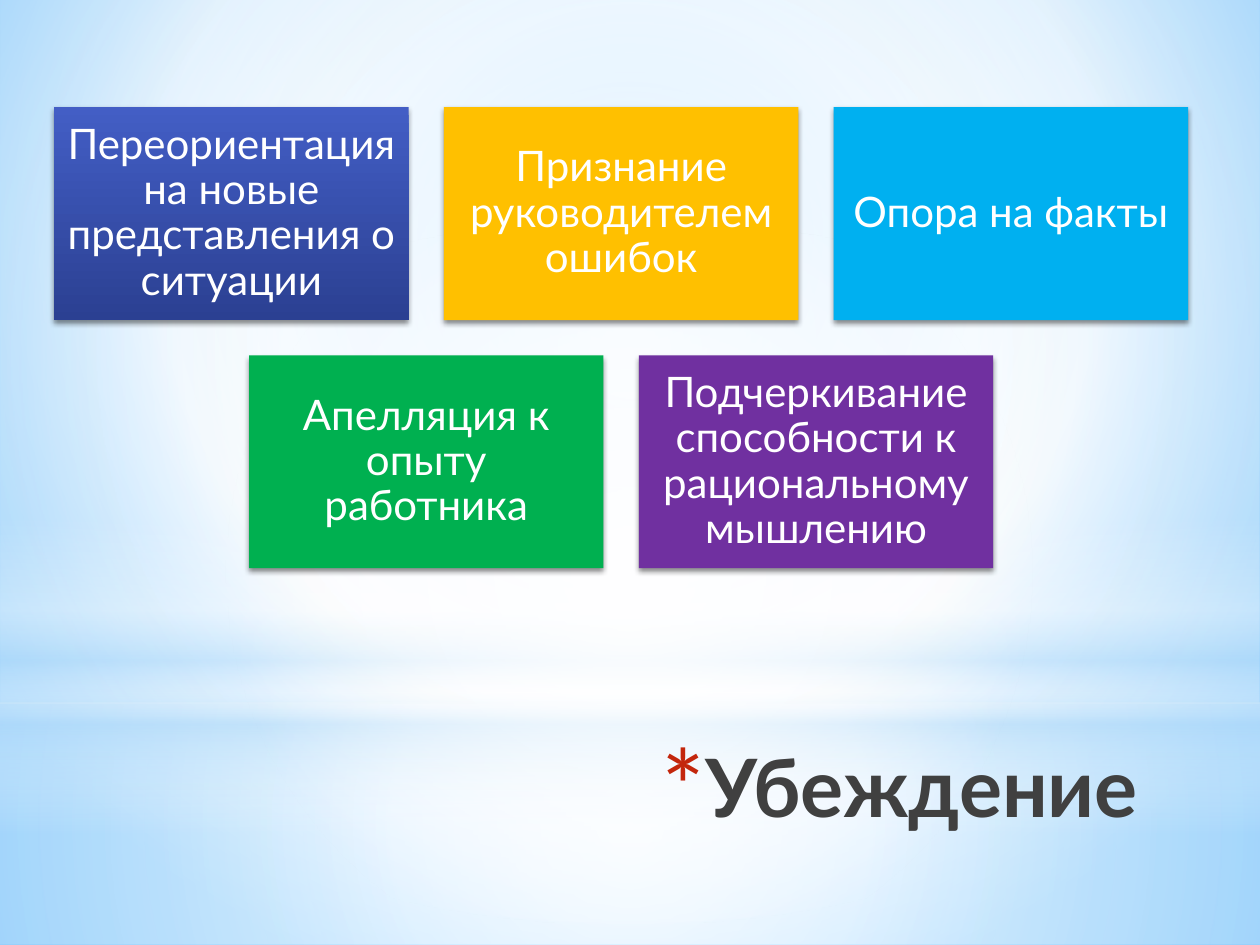
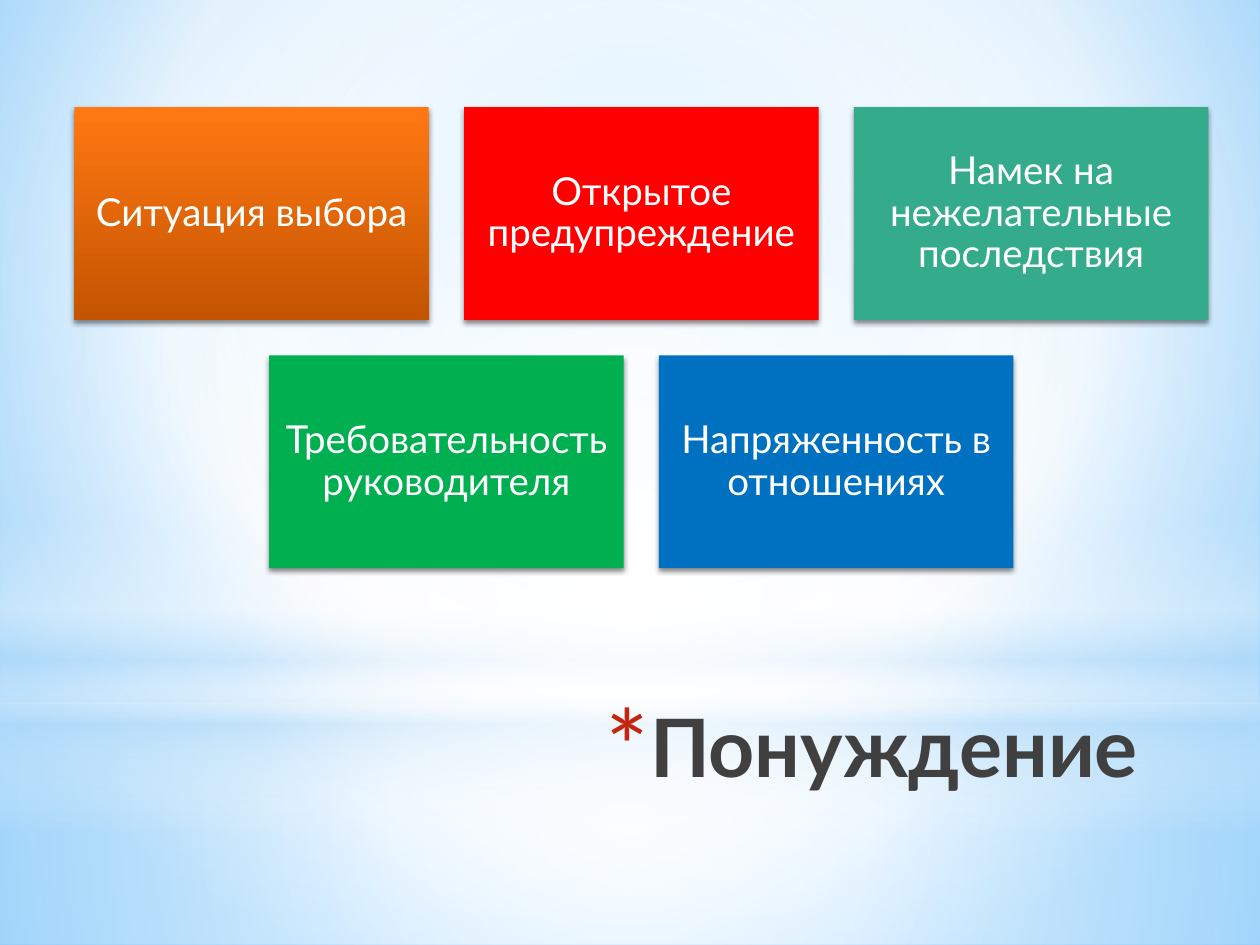
from lxml import etree
from pptx import Presentation
from pptx.dml.color import RGBColor as Rgb
from pptx.enum.shapes import MSO_SHAPE as Shape
from pptx.enum.text import MSO_ANCHOR as Anchor, MSO_AUTO_SIZE as AutoSize, PP_ALIGN as Align
from pptx.oxml import parse_xml
from pptx.oxml.ns import nsdecls, qn
from pptx.util import Inches, Pt

FONT = "Lato"
COLORS = {
    "white": "FFFFFF", "black": "000000", "charcoal": "404040", "navy": "212745",
    "sky": "9ED5FF", "azure": "5BB9FF", "mist": "B4DCFA", "bullet": "C3260C",
    "indigo": "435EC5", "deep indigo": "2B4092", "amber": "FFC000", "cyan": "00B0F0",
    "green": "00B050", "purple": "7030A0", "orange": "FF7813", "rust": "C45400",
    "red": "FF0000", "teal": "34AC8B", "blue": "0070C0",
}
CENTER = (50, 50, 50, 50)

# Gradient stops: position, colour, opacity (percent)
BACKGROUND = [(0, "sky", 100), (60, "white", 100), (100, "azure", 100)]
LOWER_GLOW = [(0, "white", 91), (37, "white", 76), (100, "mist", 79)]
UPPER_GLOW = [(0, "white", 89), (48, "white", 62), (100, "mist", 79)]
HORIZON = [(0, "white", 0), (29, "white", 30), (45, "mist", 40),
           (55, "white", 26), (65, "mist", 60), (100, "white", 0)]
SPOTLIGHT = [(0, "white", 100), (56, "white", 0)]
TITLE_INK = [(0, "black", 100), (40, "charcoal", 100), (100, "navy", 65)]

BANDS = [
    (Shape.RECTANGLE, (0, 5.58, 10, 1.92), LOWER_GLOW, CENTER),
    (Shape.RECTANGLE, (0, 0, 10, 5.58), UPPER_GLOW, CENTER),
    (Shape.RECTANGLE, (0, 4.12, 10, 2.5), HORIZON, None),
    (Shape.OVAL, (0, 1.75, 10, 5.58), SPOTLIGHT, CENTER),
]

SLIDES = [
    {
        "title": "Убеждение", "title_box": (2.01, 5.8, 7.12, 1.25),
        "cards_box": (0.43, 0.85, 9, 3.66), "size": 24, "inset": 0.1,
        "cards": [
            ("Переориентация на новые представления о ситуации", ("indigo", "deep indigo")),
            ("Признание руководителем ошибок", ("amber",)),
            ("Опора на факты", ("cyan",)),
            ("Апелляция к опыту работника", ("green",)),
            ("Подчеркивание способности к рациональному мышлению", ("purple",)),
        ],
    },
    {
        "title": "Понуждение", "title_box": (2.01, 5.48, 7.12, 1.25),
        "cards_box": (0.59, 0.85, 9, 3.66), "size": 22, "inset": 0.09,
        "cards": [
            ("Ситуация выбора", ("orange", "rust")),
            ("Открытое предупреждение", ("red",)),
            ("Намек на нежелательные последствия", ("teal",)),
            ("Требовательность руководителя", ("green",)),
            ("Напряженность в отношениях", ("blue",)),
        ],
    },
]


def rgb(name):
    return Rgb.from_string(COLORS[name])


def paint_gradient(fill, parent, stops, focus=None):
    """Fill with a vertical gradient, or a circular one around focus."""
    fill.solid()
    fill.fore_color.rgb = rgb("white")
    marks = "".join(
        f'<a:gs pos="{position * 1000}"><a:srgbClr val="{COLORS[name]}">'
        f'<a:alpha val="{opacity * 1000}"/></a:srgbClr></a:gs>'
        for position, name, opacity in stops)
    if focus:
        left, top, right, bottom = (side * 1000 for side in focus)
        course = (f'<a:path path="circle"><a:fillToRect l="{left}" t="{top}" '
                  f'r="{right}" b="{bottom}"/></a:path>')
    else:
        course = '<a:lin ang="5400000" scaled="0"/>'
    gradient = parse_xml(f'<a:gradFill {nsdecls("a")} rotWithShape="1">'
                         f'<a:gsLst>{marks}</a:gsLst>{course}</a:gradFill>')
    parent.replace(parent.find(qn("a:solidFill")), gradient)


def add_plain_shape(page, kind, box):
    shape = page.shapes.add_shape(kind, *map(Inches, box))
    shape.shadow.inherit = False
    shape.line.fill.background()
    return shape


def add_span(para, text, size):
    span = para.add_run()
    span.text = text
    span.font.name = FONT
    span.font.size = Pt(size)
    return span


def build_backdrop(deck, page):
    """Draw the shared bands and move them to the bottom of the master."""
    master = deck.slide_master
    fill = master.background.fill
    fill.solid()
    holder = master.element.find(".//" + qn("p:bgPr"))
    paint_gradient(fill, holder, BACKGROUND, (20, 10, 20, 60))
    for index, (kind, box, stops, focus) in enumerate(BANDS):
        band = add_plain_shape(page, kind, box)
        paint_gradient(band.fill, band.element.spPr, stops, focus)
        band.element.nvSpPr.cNvPr.set("id", str(20 + index))
        master.shapes.element.insert(2 + index, band.element)


def add_title(page, box, text):
    title = page.shapes.title
    title.left, title.top, title.width, title.height = map(Inches, box)
    frame = title.text_frame
    frame.word_wrap = True
    frame.auto_size = AutoSize.NONE
    frame.vertical_anchor = Anchor.TOP
    para = frame.paragraphs[0]
    para.alignment = Align.RIGHT
    # Red asterisk bullet with a hanging indent
    props = para._p.get_or_add_pPr()
    props.set("marL", str(Inches(0.35)))
    props.set("indent", str(-Inches(0.35)))
    color = etree.SubElement(props, qn("a:buClr"))
    etree.SubElement(color, qn("a:srgbClr"), val=COLORS["bullet"])
    etree.SubElement(props, qn("a:buSzPct"), val="128000")
    etree.SubElement(props, qn("a:buFont"), typeface=FONT)
    etree.SubElement(props, qn("a:buChar"), char="*")
    span = add_span(para, text, 46)
    span.font.bold = True
    paint_gradient(span.font.fill, span._r.get_or_add_rPr(), TITLE_INK)


def add_card_shadow(card):
    effects = card.element.spPr.find(qn("a:effectLst"))
    shadow = etree.SubElement(effects, qn("a:outerShdw"), blurRad=str(Pt(3.1)),
                              dist=str(Pt(1.8)), dir="5400000", rotWithShape="0")
    color = etree.SubElement(shadow, qn("a:srgbClr"), val=COLORS["black"])
    etree.SubElement(color, qn("a:alpha"), val="45000")


def add_card(page, box, text, colors, size, inset):
    card = add_plain_shape(page, Shape.RECTANGLE, box)
    add_card_shadow(card)
    if len(colors) == 2:
        stops = [(0, colors[0], 100), (100, colors[1], 100)]
        paint_gradient(card.fill, card.element.spPr, stops)
    else:
        card.fill.solid()
        card.fill.fore_color.rgb = rgb(colors[0])
    frame = card.text_frame
    frame.word_wrap = True
    frame.vertical_anchor = Anchor.MIDDLE
    frame.margin_left = frame.margin_right = Inches(inset)
    frame.margin_top = frame.margin_bottom = Inches(inset)
    para = frame.paragraphs[0]
    para.alignment = Align.CENTER
    para.line_spacing = 0.9
    add_span(para, text, size).font.color.rgb = rgb("white")


def add_cards(page, box, cards, size, inset, columns=3, gap=0.28):
    """Lay cards out in rows, each row centred in the box."""
    left, top, width, height = box
    rows = [cards[start:start + columns] for start in range(0, len(cards), columns)]
    card_width = (width - gap * (columns - 1)) / columns
    card_height = (height - gap * (len(rows) - 1)) / len(rows)
    for row_index, row in enumerate(rows):
        row_left = left + (columns - len(row)) * (card_width + gap) / 2
        card_top = top + row_index * (card_height + gap)
        for column, (text, colors) in enumerate(row):
            card_left = row_left + column * (card_width + gap)
            add_card(page, (card_left, card_top, card_width, card_height),
                     text, colors, size, inset)


def main():
    deck = Presentation()
    deck.slide_width, deck.slide_height = Inches(10), Inches(7.5)
    title_only = deck.slide_layouts[5]
    for number, content in enumerate(SLIDES):
        page = deck.slides.add_slide(title_only)
        if number == 0:
            build_backdrop(deck, page)
        add_title(page, content["title_box"], content["title"])
        add_cards(page, content["cards_box"], content["cards"],
                  content["size"], content["inset"])
    deck.save("out.pptx")


if __name__ == "__main__":
    main()
